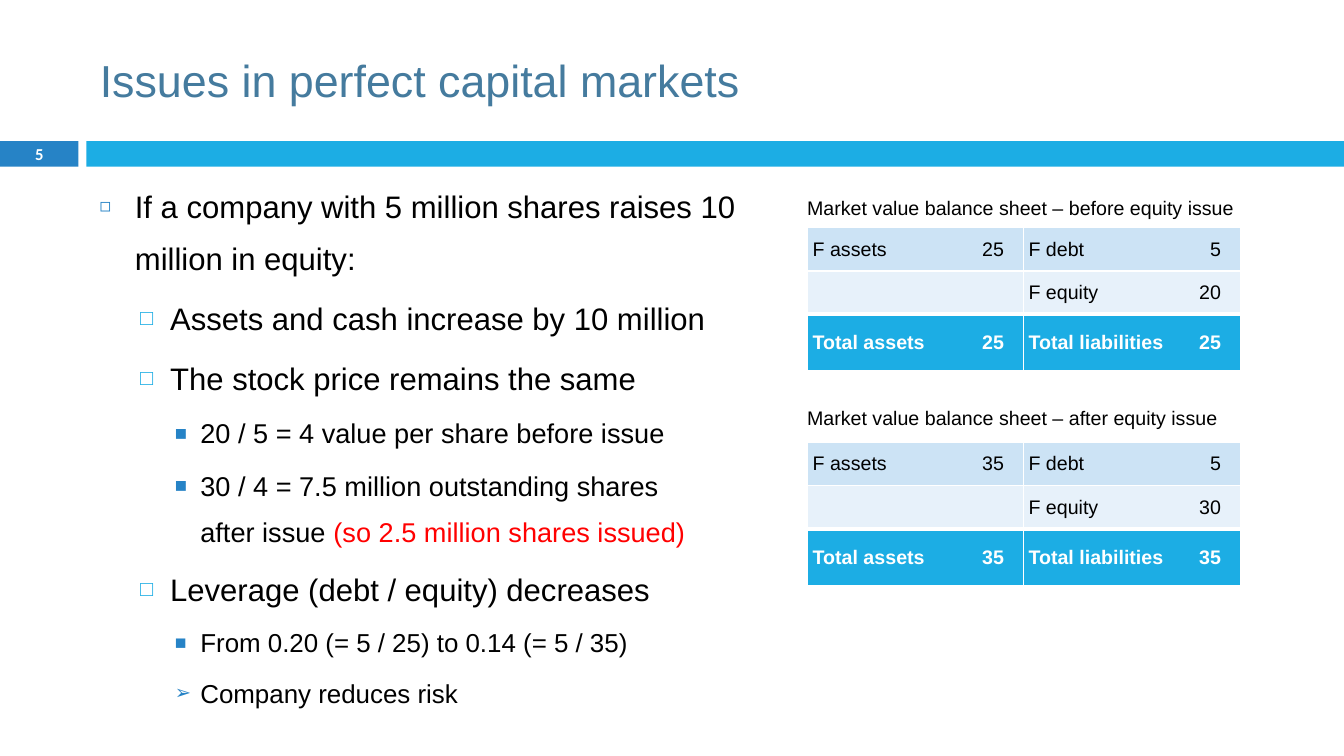
from dataclasses import dataclass

import lxml.etree
import pptx
import pptx.dml.color
import pptx.enum.shapes
import pptx.enum.text
import pptx.oxml.ns
import pptx.util

Cm, Pt = pptx.util.Cm, pptx.util.Pt
ALIGN = pptx.enum.text.PP_ALIGN
MIDDLE = pptx.enum.text.MSO_ANCHOR.MIDDLE


@dataclass(frozen=True)
class Theme:
    font: str = "Arial"
    number_font: str = "Calibri"
    title: str = "457B9E"
    blue: str = "2683C6"
    cyan: str = "1CADE4"
    band_dark: str = "CCE3F5"
    band_light: str = "E7F1FA"
    text: str = "000000"
    white: str = "FFFFFF"
    accent: str = "FF0000"
    title_size: float = 32
    number_size: float = 11.9
    main_size: float = 22.2
    detail_size: float = 19.4
    small_size: float = 18.5
    table_size: float = 14


THEME = Theme()


@dataclass(frozen=True)
class Level:
    indent: float
    hanging: float
    before: float
    bullet: str
    bullet_color: str
    bullet_percent: int


TOPIC = Level(0.89, 0.89, 7, "◻", THEME.blue, 60)
POINT = Level(1.78, 0.76, 5.5, "□", THEME.cyan, 70)
DETAIL = Level(2.54, 0.64, 5, "■", THEME.blue, 75)
RESULT = Level(2.54, 0.64, 5, "➢", THEME.blue, 75)


def rgb(value):
    return pptx.dml.color.RGBColor.from_string(value)


def sub(parent, tag, **attributes):
    return lxml.etree.SubElement(parent, pptx.oxml.ns.qn(tag), attributes)


class SlideBuilder:
    def __init__(self, presentation, theme):
        self.theme = theme
        self.slide = presentation.slides.add_slide(presentation.slide_layouts[5])

    def run(self, paragraph, text, size, color=None, bold=False, font=None):
        run = paragraph.add_run()
        run.text = text
        run.font.name = font or self.theme.font
        run.font.size = Pt(size)
        run.font.bold = bold
        run.font.color.rgb = rgb(color or self.theme.text)

    def title(self, text, left, top, width, height):
        title = self.slide.shapes.title
        title.left, title.top, title.width, title.height = map(Cm, (left, top, width, height))
        title.text_frame.vertical_anchor = MIDDLE
        paragraph = title.text_frame.paragraphs[0]
        paragraph.alignment = ALIGN.LEFT
        self.run(paragraph, text, self.theme.title_size, self.theme.title)

    def bar(self, left, top, width, height, color):
        bar = self.slide.shapes.add_shape(
            pptx.enum.shapes.MSO_SHAPE.RECTANGLE, *map(Cm, (left, top, width, height)))
        bar.shadow.inherit = False
        bar.fill.solid()
        bar.fill.fore_color.rgb = rgb(color)
        bar.line.fill.background()
        return bar

    def page_number(self, bar, text):
        bar.text_frame.vertical_anchor = MIDDLE
        paragraph = bar.text_frame.paragraphs[0]
        paragraph.alignment = ALIGN.CENTER
        self.run(paragraph, text, self.theme.number_size, self.theme.white, True,
                 self.theme.number_font)

    def text_box(self, left, top, width, height, wrap=True):
        frame = self.slide.shapes.add_textbox(*map(Cm, (left, top, width, height))).text_frame
        frame.word_wrap = wrap
        return frame

    def caption(self, text, left, top, width, height):
        frame = self.text_box(left, top, width, height, wrap=False)
        self.run(frame.paragraphs[0], text, self.theme.table_size)

    def bullets(self, items, left, top, width, height):
        """Each item is a level, a size, and lines made of (text, color) parts."""
        frame = self.text_box(left, top, width, height)
        for index, (level, size, lines) in enumerate(items):
            paragraph = frame.add_paragraph() if index else frame.paragraphs[0]
            paragraph.line_spacing = 1.4
            paragraph.space_before = Pt(level.before)
            self.bullet(paragraph, level)
            for number, line in enumerate(lines):
                if number:
                    paragraph.add_line_break()
                for text, color in line:
                    self.run(paragraph, text, size, color)

    def bullet(self, paragraph, level):
        properties = paragraph._p.get_or_add_pPr()
        properties.set("marL", str(Cm(level.indent)))
        properties.set("indent", str(-Cm(level.hanging)))
        sub(sub(properties, "a:buClr"), "a:srgbClr", val=level.bullet_color)
        sub(properties, "a:buSzPct", val=str(level.bullet_percent * 1000))
        sub(properties, "a:buFont", typeface=self.theme.font)
        sub(properties, "a:buChar", char=level.bullet)

    def borders(self, cell, widths):
        """Draw white borders; a width of 0 hides that side."""
        properties = cell._tc.get_or_add_tcPr()
        for side, width in zip("LRTB", widths):
            line = sub(properties, f"a:ln{side}", w=str(Pt(width)))
            if width:
                sub(sub(line, "a:solidFill"), "a:srgbClr", val=self.theme.white)
            else:
                sub(line, "a:noFill")

    def balance_sheet(self, rows, left, top, columns, heights):
        """Each side of the sheet is a label, an amount and a narrow spacer column."""
        table = self.slide.shapes.add_table(
            len(heights), len(columns),
            *map(Cm, (left, top, sum(columns), sum(heights)))).table
        table.first_row = table.horz_banding = False
        for column, width in zip(table.columns, columns):
            column.width = Cm(width)
        fills = (self.theme.band_dark, self.theme.band_light, self.theme.cyan)
        rules = (1, 1, 3, 1)
        for r, (values, fill) in enumerate(zip(rows, fills)):
            table.rows[r].height = Cm(heights[r])
            total = r == len(rows) - 1
            for c in range(len(columns)):
                cell, part = table.cell(r, c), c % 3
                self.borders(cell, (part == 0, part == 2, rules[r], rules[r + 1]))
                cell.fill.solid()
                cell.fill.fore_color.rgb = rgb(fill)
                cell.vertical_anchor = MIDDLE
                cell.margin_left = cell.margin_right = Cm(0.13)
                cell.margin_top = cell.margin_bottom = 0
                text = "" if part == 2 else values[c // 3 * 2 + part]
                if text:
                    paragraph = cell.text_frame.paragraphs[0]
                    paragraph.alignment = ALIGN.RIGHT if part else ALIGN.LEFT
                    self.run(paragraph, text, self.theme.table_size,
                             self.theme.white if total else self.theme.text, total)


def main():
    presentation = pptx.Presentation()
    presentation.slide_width, presentation.slide_height = Cm(33.87), Cm(19.05)
    page = SlideBuilder(presentation, THEME)
    number_bar = page.bar(0, 3.56, 1.98, 0.64, THEME.blue)
    page.bar(2.18, 3.56, 31.69, 0.64, THEME.cyan)
    page.title("Issues in perfect capital markets", 2.26, 0.64, 30.2, 2.74)
    page.page_number(number_bar, "5")

    main_size, detail_size, small_size = THEME.main_size, THEME.detail_size, THEME.small_size
    black = THEME.text
    page.bullets([
        (TOPIC, main_size,
         [[("If a company with 5 million shares raises 10 million in equity:", black)]]),
        (POINT, main_size, [[("Assets and cash increase by 10 million", black)]]),
        (POINT, main_size, [[("The stock price remains the same", black)]]),
        (DETAIL, detail_size, [[("20 / 5 = 4 value per share before issue", black)]]),
        (DETAIL, detail_size,
         [[("30 / 4 = 7.5 million outstanding shares ", black)],
          [("after issue ", black), ("(so 2.5 million shares issued)", THEME.accent)]]),
        (POINT, main_size, [[("Leverage (debt / equity) decreases", black)]]),
        (DETAIL, small_size, [[("From 0.20 (= 5 / 25) to 0.14 (= 5 / 35)", black)]]),
        (RESULT, small_size, [[("Company reduces risk", black)]]),
    ], 2.26, 4.22, 17.42, 14.2)

    columns, heights = (3.81, 1.27, 0.3, 3.84, 1.27, 0.3), (1.09, 1.09, 1.42)
    for moment, total, equity, caption_top, table_top in (
            ("before", "25", "20", 4.8, 5.74), ("after", "35", "30", 10.11, 11.15)):
        page.caption(f"Market value balance sheet – {moment} equity issue",
                     20.09, caption_top, 11.3, 0.86)
        page.balance_sheet([
            ("F assets", total, "F debt", "5"),
            ("", "", "F equity", equity),
            ("Total assets", total, "Total liabilities", total),
        ], 20.35, table_top, columns, heights)
    presentation.save("out.pptx")


if __name__ == "__main__":
    main()
